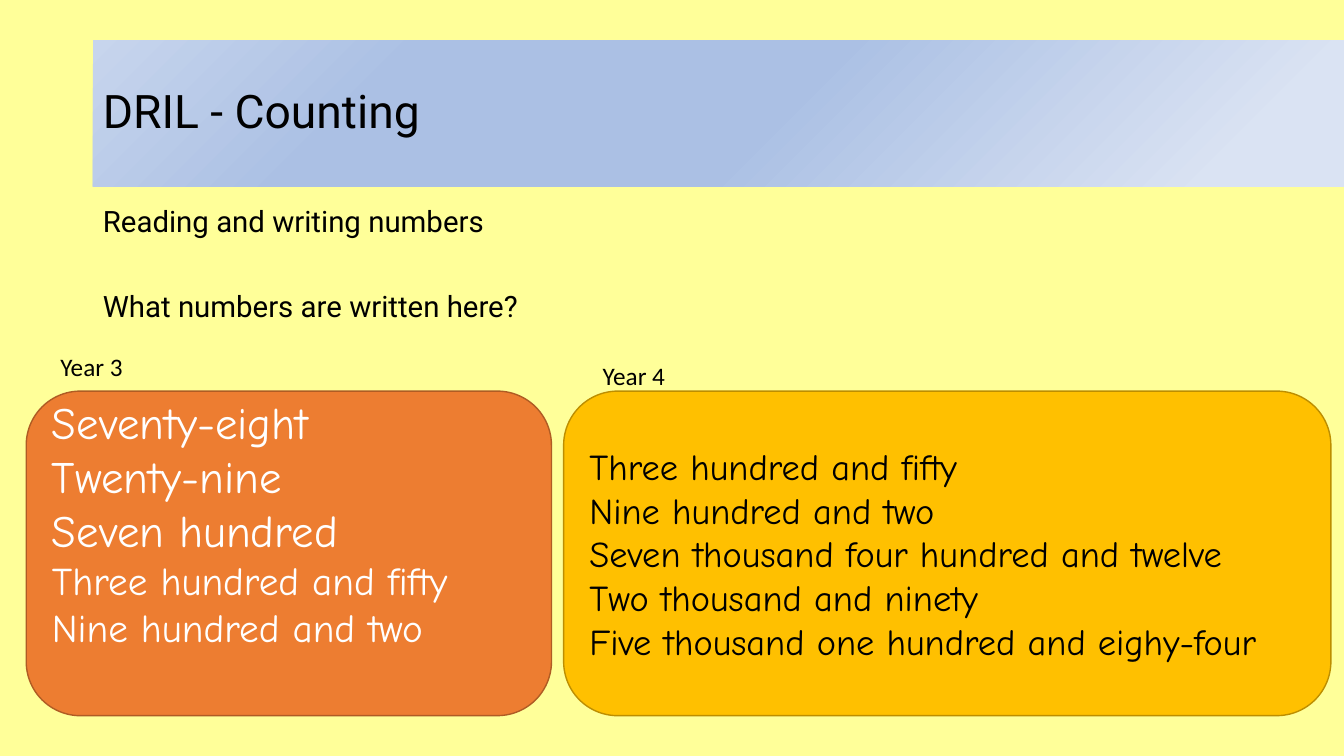
from lxml.etree import SubElement
from pptx import Presentation
from pptx.dml.color import RGBColor
from pptx.enum.shapes import MSO_SHAPE
from pptx.enum.text import MSO_ANCHOR, MSO_AUTO_SIZE, PP_ALIGN
from pptx.oxml import parse_xml
from pptx.oxml.ns import nsdecls, qn
from pptx.util import Inches, Pt

CREAM = RGBColor(0xFF, 0xFF, 0x99)
BLACK = RGBColor(0, 0, 0)
WHITE = RGBColor(0xFF, 0xFF, 0xFF)
ORANGE = RGBColor(0xED, 0x7D, 0x31)
DARK_ORANGE = RGBColor(0xAF, 0x5C, 0x24)
GOLD = RGBColor(0xFF, 0xC0, 0x00)
DARK_GOLD = RGBColor(0xBD, 0x8E, 0x00)
BAND_STOPS = [
    (10, RGBColor(0xDA, 0xE3, 0xF3)),
    (46, RGBColor(0xAB, 0xC0, 0xE4)),
    (76, RGBColor(0xAB, 0xC0, 0xE4)),
    (100, RGBColor(0xC7, 0xD5, 0xED)),
]

TITLE = "DRIL - Counting"
PROMPTS = [("Reading and writing numbers", 21), ("What numbers are written here?", 21)]
CARDS = [
    dict(
        label="Year 3", label_at=(0.5, 3.44), left=0.26, width=5.21,
        fill=ORANGE, edge=DARK_ORANGE, ink=WHITE, bottom_inset=0.66,
        numbers=[
            ("Seventy-eight", 32),
            ("Twenty-nine", 32),
            ("Seven hundred", 32),
            ("Three hundred and fifty", 28),
            ("Nine hundred and two", 28),
        ],
    ),
    dict(
        label="Year 4", label_at=(5.88, 3.53), left=5.59, width=7.61,
        fill=GOLD, edge=DARK_GOLD, ink=BLACK, bottom_inset=0.05,
        numbers=[
            ("Three hundred and fifty", 26),
            ("Nine hundred and two", 26),
            ("Seven thousand four hundred and twelve", 26),
            ("Two thousand and ninety", 26),
            ("Five thousand one hundred and eighy-four", 26),
        ],
    ),
]
CARD_TOP, CARD_HEIGHT = 3.88, 3.22


def write(shape, lines, font, color=BLACK, anchor=MSO_ANCHOR.TOP, spacing=1.0, gaps=()):
    """Fill a shape with left-aligned (text, size) lines."""
    frame = shape.text_frame
    frame.word_wrap = True
    frame.auto_size = MSO_AUTO_SIZE.NONE
    frame.vertical_anchor = anchor
    for index, (text, size) in enumerate(lines):
        paragraph = frame.add_paragraph() if index else frame.paragraphs[0]
        paragraph.alignment = PP_ALIGN.LEFT
        paragraph.line_spacing = spacing
        paragraph.space_before = Pt(gaps[index] if gaps else 0)
        run = paragraph.add_run()
        run.text = text
        run.font.name = font
        run.font.size = Pt(size)
        run.font.color.rgb = color


def place(shape, left, top, width, height):
    """Move and size a placeholder, in inches."""
    shape.left, shape.top = Inches(left), Inches(top)
    shape.width, shape.height = Inches(width), Inches(height)


def add_band(slide):
    """Draw the gradient band behind the title."""
    band = slide.shapes.add_shape(
        MSO_SHAPE.RECTANGLE, Inches(0.92), Inches(0.4), Inches(12.42), Inches(1.45))
    band.shadow.inherit = False
    band.line.fill.background()
    stops = "".join(
        f'<a:gs pos="{position * 1000}"><a:srgbClr val="{color}"/></a:gs>'
        for position, color in BAND_STOPS)
    gradient = parse_xml(
        f'<a:gradFill {nsdecls("a")} rotWithShape="1"><a:gsLst>{stops}</a:gsLst>'
        '<a:path path="circle"><a:fillToRect l="100000" t="100000"/></a:path></a:gradFill>')
    band._element.spPr.find(qn("a:prstGeom")).addnext(gradient)
    slide.shapes._spTree.insert(2, band._element)


def add_card(slide, card):
    """Draw one year group's rounded card and its label."""
    panel = slide.shapes.add_shape(
        MSO_SHAPE.ROUNDED_RECTANGLE, Inches(card["left"]), Inches(CARD_TOP),
        Inches(card["width"]), Inches(CARD_HEIGHT))
    panel.shadow.inherit = False
    panel.fill.solid()
    panel.fill.fore_color.rgb = card["fill"]
    panel.line.color.rgb = card["edge"]
    panel.line.width = Pt(1)
    panel.text_frame.margin_bottom = Inches(card["bottom_inset"])
    write(panel, card["numbers"], "Comic Neue", color=card["ink"], anchor=MSO_ANCHOR.MIDDLE)

    left, top = card["label_at"]
    label = slide.shapes.add_textbox(Inches(left), Inches(top), Inches(1.46), Inches(0.4))
    write(label, [(card["label"], 18)], "Calibri")


def main():
    """Build and save the slide."""
    deck = Presentation()
    deck.slide_width, deck.slide_height = Inches(13.33), Inches(7.5)
    slide = deck.slides.add_slide(deck.slide_layouts[1])
    slide.background.fill.solid()
    slide.background.fill.fore_color.rgb = CREAM
    add_band(slide)

    title, prompts = slide.placeholders
    place(title, 0.92, 0.4, 11.5, 1.45)
    write(title, [(TITLE, 33)], "Roboto", anchor=MSO_ANCHOR.MIDDLE, spacing=0.9)

    place(prompts, 0.92, 2, 11.5, 4.76)
    write(prompts, PROMPTS, "Roboto", spacing=0.9, gaps=(7.5, 38))
    for paragraph in prompts.text_frame.paragraphs:
        properties = paragraph._p.get_or_add_pPr()
        properties.set("marL", "0")
        properties.set("indent", "0")
        SubElement(properties, qn("a:buNone"))

    for card in CARDS:
        add_card(slide, card)
    deck.save("out.pptx")


if __name__ == "__main__":
    main()
